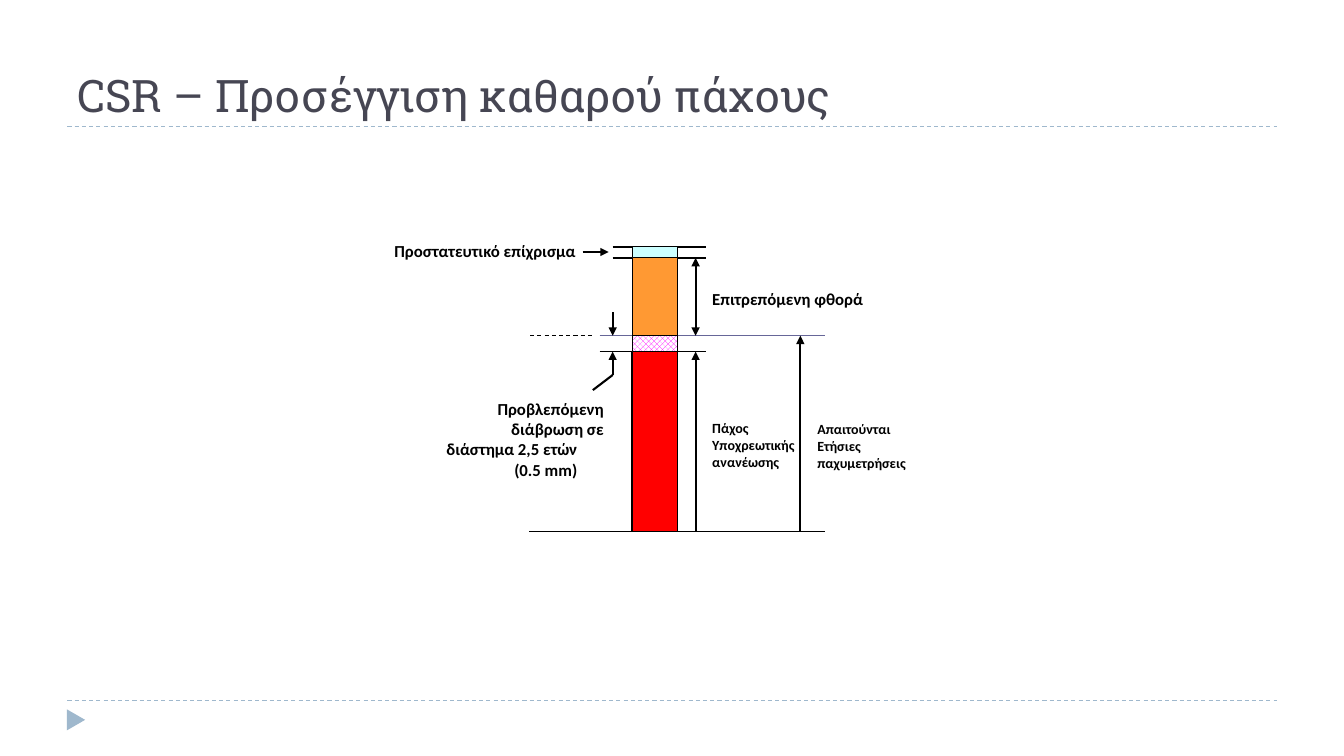
from pptx import Presentation
from pptx.dml.color import RGBColor
from pptx.enum.dml import MSO_LINE_DASH_STYLE as DASH, MSO_PATTERN_TYPE as PATTERN
from pptx.enum.shapes import MSO_CONNECTOR_TYPE as CONNECTOR, MSO_SHAPE as SHAPE
from pptx.enum.text import MSO_ANCHOR as ANCHOR, PP_ALIGN as ALIGN
from pptx.oxml.ns import qn
from pptx.util import Cm, Pt
from lxml.etree import SubElement

BLACK = RGBColor(0x00, 0x00, 0x00)
WHITE = RGBColor(0xFF, 0xFF, 0xFF)
TITLE_GREY = RGBColor(0x46, 0x46, 0x53)
RULE_BLUE = RGBColor(0x9F, 0xB8, 0xCD)
SURVEY_BLUE = RGBColor(0x66, 0x66, 0x98)
COATING_CYAN = RGBColor(0xCC, 0xFF, 0xFF)
WEAR_ORANGE = RGBColor(0xFF, 0x99, 0x33)
CORROSION_PINK = RGBColor(0xFF, 0x00, 0xFF)
RENEWAL_RED = RGBColor(0xFF, 0x00, 0x00)


def add_line(slide, x1, y1, x2, y2, color=BLACK, width=1, dashed=False, ends=()):
    line = slide.shapes.add_connector(
        CONNECTOR.STRAIGHT, Cm(x1), Cm(y1), Cm(x2), Cm(y2))
    line.line.color.rgb = color
    line.line.width = Pt(width)
    if dashed:
        line.line.dash_style = DASH.DASH
    for end in ends:
        SubElement(line.line._get_or_add_ln(), qn(f"a:{end}"), type="triangle")
    SubElement(line._element.spPr, qn("a:effectLst"))


def add_text(slide, x, y, width, height, lines, size, font="Calibri", color=BLACK,
             bold=True, align=ALIGN.LEFT, anchor=ANCHOR.MIDDLE, wrap=False):
    frame = slide.shapes.add_textbox(Cm(x), Cm(y), Cm(width), Cm(height)).text_frame
    frame.word_wrap = wrap
    frame.vertical_anchor = anchor
    frame.text = "\n".join(lines)
    for paragraph in frame.paragraphs:
        paragraph.alignment = align
        for run in paragraph.runs:
            run.font.name, run.font.size = font, Pt(size)
            run.font.bold, run.font.color.rgb = bold, color
    return frame


def add_frame(slide, left, top, width, height):
    """Title, the two dashed rules and the corner marker."""
    for rule in (3.18, 17.65):
        add_line(slide, left, top + rule, left + width, top + rule,
                 RULE_BLUE, 0.75, dashed=True)
    marker = slide.shapes.add_shape(
        SHAPE.ISOSCELES_TRIANGLE, Cm(left - 0.05), Cm(top + height - 1.14),
        Cm(0.53), Cm(0.46))
    marker.rotation = 90
    marker.shadow.inherit = False
    marker.fill.solid()
    marker.fill.fore_color.rgb = RULE_BLUE
    marker.line.fill.background()
    add_text(slide, left, top + 0.43, width, 2.75, ["CSR – Προσέγγιση καθαρού πάχους"],
             32, "Roboto Slab", TITLE_GREY, False, anchor=ANCHOR.BOTTOM, wrap=True)


def add_thickness_diagram(slide, left, top):
    """Plate section with its limits, measures and labels."""
    # Heights of the layer limits
    coat, wear, survey, renewal, base = (
        top + level for level in (0.32, 0.6, 2.56, 2.96, 7.49))
    # Upright positions
    bar, gap_arrow, wear_arrow, survey_arrow = (
        left + offset for offset in (6.43, 5.94, 8.03, 10.67))
    short_end, long_end = left + 8.28, left + 11.3

    # Limit lines
    for start, end, level, color in (
            (5.94, short_end, coat, BLACK),
            (5.94, short_end, wear, BLACK),
            (5.61, long_end, survey, SURVEY_BLUE),
            (5.61, short_end, renewal, BLACK),
            (3.84, long_end, base, BLACK)):
        add_line(slide, left + start, level, end, level, color)
    add_line(slide, left + 3.86, survey, left + 5.49, survey, width=0.75, dashed=True)

    # Layers of the plate
    for upper, lower, color, outline in (
            (renewal, base, RENEWAL_RED, 1),
            (wear, renewal, WEAR_ORANGE, 0.75),
            (survey, renewal, CORROSION_PINK, 0.75),
            (coat, wear, COATING_CYAN, 0.75)):
        layer = slide.shapes.add_shape(
            SHAPE.RECTANGLE, Cm(bar), Cm(upper), Cm(1.14), Cm(lower - upper))
        layer.shadow.inherit = False
        if color == CORROSION_PINK:
            layer.fill.patterned()
            layer.fill.pattern = PATTERN.LARGE_CHECKER_BOARD
            layer.fill.back_color.rgb = WHITE
        else:
            layer.fill.solid()
        layer.fill.fore_color.rgb = color
        layer.line.color.rgb = BLACK
        layer.line.width = Pt(outline)

    # Measure arrows and the bent pointer
    bend = top + 3.55
    for x1, y1, x2, y2, ends in (
            (wear_arrow, base, wear_arrow, renewal, ["tailEnd"]),
            (wear_arrow, survey, wear_arrow, wear, ["headEnd", "tailEnd"]),
            (survey_arrow, base, survey_arrow, survey, ["tailEnd"]),
            (gap_arrow, top + 1.97, gap_arrow, survey, ["tailEnd"]),
            (gap_arrow, bend, gap_arrow, renewal, ["tailEnd"]),
            (gap_arrow, bend, left + 5.44, top + 3.93, []),
            (left + 5.18, top + 0.45, left + 5.84, top + 0.45, ["tailEnd"])):
        add_line(slide, x1, y1, x2, y2, width=1.5, ends=ends)

    # Labels on the right
    for x, y, width, height, lines, size in (
            (8.2, 1.24, 4.37, 0.76, ["Επιτρεπόμενη φθορά"], 12),
            (8.2, 4.54, 2.62, 1.55, ["Πάχος", "Υποχρεωτικής", "ανανέωσης"], 10),
            (10.85, 4.56, 2.77, 1.55, ["Απαιτούνται", "Ετήσιες", "παχυμετρήσεις"], 10)):
        add_text(slide, left + x, top + y, width, height, lines, size)

    # Labels on the left
    add_text(slide, left, top + 0.04, 5.26, 0.76, ["Προστατευτικό επίχρισμα"], 12,
             align=ALIGN.RIGHT, wrap=True)
    corrosion = add_text(
        slide, left + 1.45, top + 4.01, 4.52, 2.31,
        ["Προβλεπόμενη", "διάβρωση σε", "διάστημα 2,5 ετών", "(0.5 mm)"], 12,
        align=ALIGN.RIGHT, wrap=True)
    interval = corrosion.paragraphs[2]
    interval._p.get_or_add_pPr().set("marR", str(Cm(0.67)))


def main():
    presentation = Presentation()
    presentation.slide_width, presentation.slide_height = Cm(33.87), Cm(19.05)
    slide = presentation.slides.add_slide(presentation.slide_layouts[6])
    add_frame(slide, 1.7, 0, 30.48, 19.05)
    add_thickness_diagram(slide, 9.5, 5.9)
    presentation.save("out.pptx")


if __name__ == "__main__":
    main()
